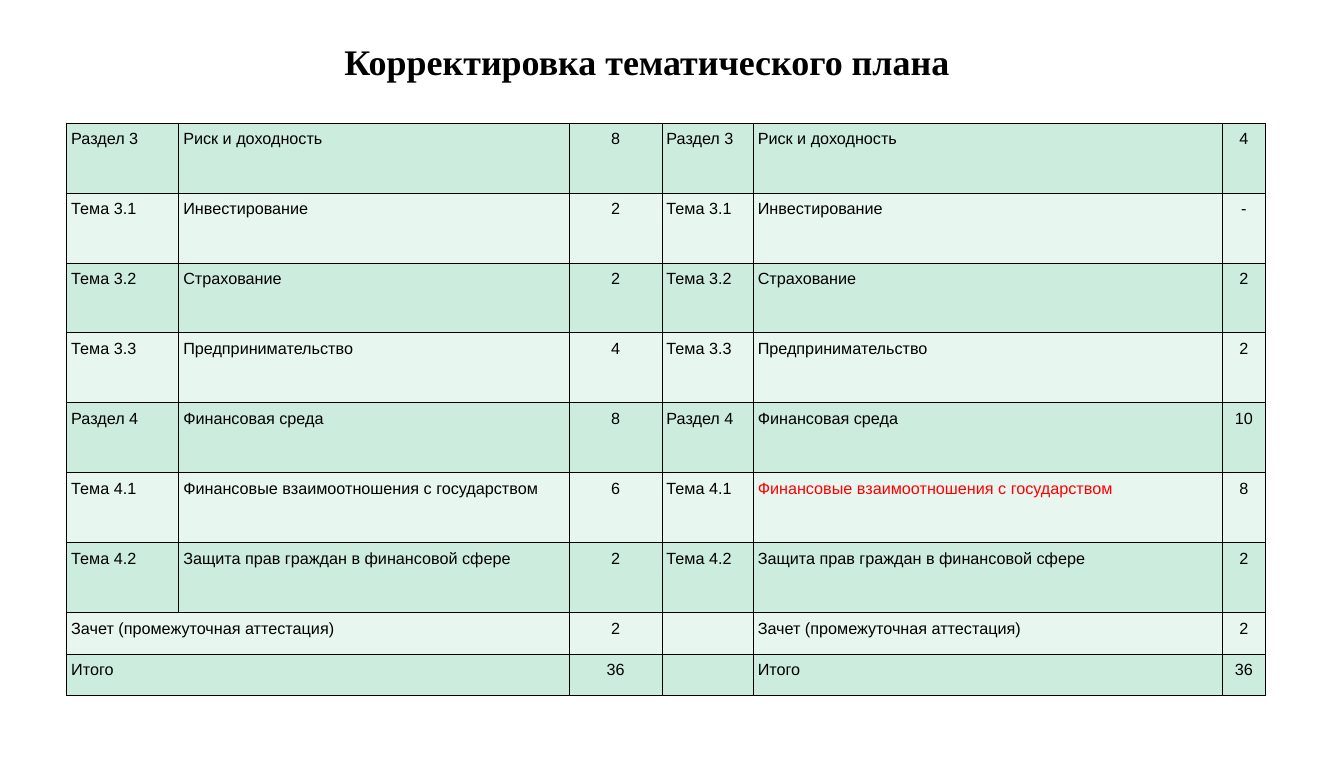
import pptx
import pptx.util
import pptx.dml.color
import pptx.enum.text
import pptx.oxml
import pptx.oxml.ns

PX = 9144
COLORS = {"ink": "000000", "changed": "FF0000", "dark_band": "CCECDE", "light_band": "E7F6EF"}
LEFT = pptx.enum.text.PP_ALIGN.LEFT
CENTER = pptx.enum.text.PP_ALIGN.CENTER


def write(frame, text, font="Arial", size=18, color="ink", bold=False, align=LEFT, spacing=1.0):
    para = frame.paragraphs[0]
    para.alignment = align
    para.line_spacing = spacing
    span = para.add_run()
    span.text = text
    span.font.name = font
    span.font.size = pptx.util.Pt(size)
    span.font.bold = bold
    span.font.color.rgb = pptx.dml.color.RGBColor.from_string(COLORS[color])


def outline(cell):
    properties = cell._tc.get_or_add_tcPr()
    for position, side in enumerate(("lnL", "lnR", "lnT", "lnB")):
        border = pptx.oxml.parse_xml(
            f'<a:{side} {pptx.oxml.ns.nsdecls("a")} w="12700"><a:solidFill>'
            f'<a:srgbClr val="{COLORS["ink"]}"/></a:solidFill></a:{side}>'
        )
        properties.insert(position, border)


deck = pptx.Presentation()
deck.slide_width = 2075 * PX
deck.slide_height = 1169 * PX
page = deck.slides.add_slide(deck.slide_layouts[6])

title_box = page.shapes.add_textbox(522 * PX, 56 * PX, 972 * PX, 77 * PX)
title_box.text_frame.word_wrap = False
title_box.text_frame.auto_size = pptx.enum.text.MSO_AUTO_SIZE.SHAPE_TO_FIT_TEXT
write(title_box.text_frame, "Корректировка тематического плана",
      font="Times New Roman", size=40, bold=True)

topics = [
    ("Раздел 3", "Риск и доходность", "8", "4"),
    ("Тема 3.1", "Инвестирование", "2", "-"),
    ("Тема 3.2", "Страхование", "2", "2"),
    ("Тема 3.3", "Предпринимательство", "4", "2"),
    ("Раздел 4", "Финансовая среда", "8", "10"),
    ("Тема 4.1", "Финансовые взаимоотношения с государством", "6", "8"),
    ("Тема 4.2", "Защита прав граждан в финансовой сфере", "2", "2"),
]
totals = [
    ("Зачет (промежуточная аттестация)", "2", "2"),
    ("Итого", "36", "36"),
]
rows = [(code, topic, before, code, topic, after) for code, topic, before, after in topics]
rows += [(label, "", before, "", label, after) for label, before, after in totals]
changed_cell = (5, 4)

column_widths = [173, 603, 143, 141, 724, 67]
row_heights = [108] * len(topics) + [64] * len(totals)
plan = page.shapes.add_table(
    len(rows), len(column_widths), 103 * PX, 190 * PX,
    sum(column_widths) * PX, sum(row_heights) * PX,
).table
plan.first_row = False
plan.horz_banding = False
for column, width in zip(plan.columns, column_widths):
    column.width = width * PX
for row, height in zip(plan.rows, row_heights):
    row.height = height * PX
for row_index in range(len(topics), len(rows)):
    plan.cell(row_index, 0).merge(plan.cell(row_index, 1))

for row_index, texts in enumerate(rows):
    band = "light_band" if row_index % 2 else "dark_band"
    for column_index, text in enumerate(texts):
        cell = plan.cell(row_index, column_index)
        cell.margin_left = cell.margin_right = 7 * PX
        cell.margin_top = cell.margin_bottom = 7 * PX
        cell.fill.solid()
        cell.fill.fore_color.rgb = pptx.dml.color.RGBColor.from_string(COLORS[band])
        outline(cell)
        if text:
            write(cell.text_frame, text, spacing=1.15,
                  color="changed" if (row_index, column_index) == changed_cell else "ink",
                  align=CENTER if column_index in (2, 5) else LEFT)

deck.save("out.pptx")
